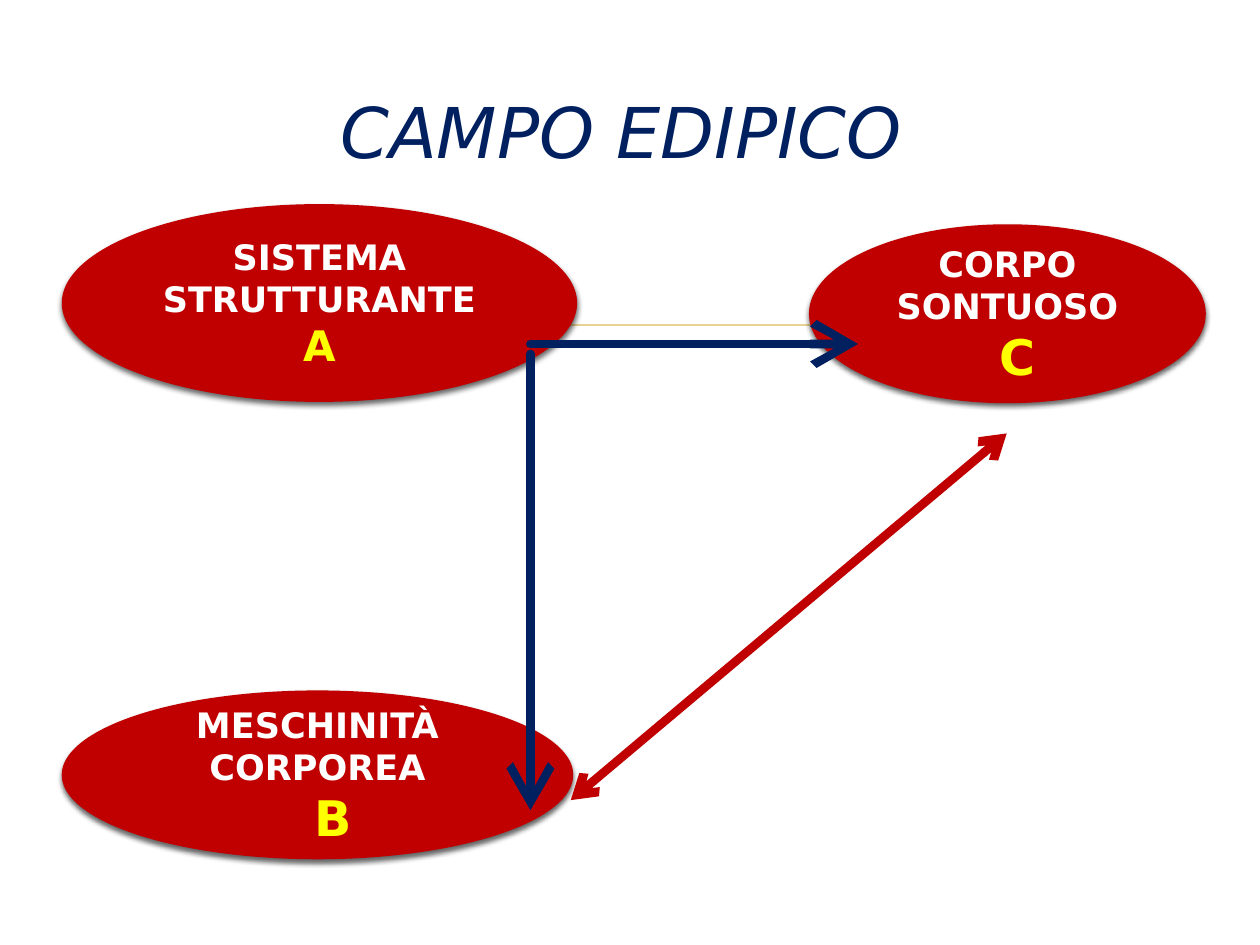
from lxml.etree import SubElement
from pptx import Presentation
from pptx.dml.color import RGBColor
from pptx.enum.shapes import MSO_CONNECTOR, MSO_SHAPE
from pptx.enum.text import MSO_ANCHOR, PP_ALIGN
from pptx.oxml.ns import qn
from pptx.util import Inches, Pt

FONT = "DejaVu Sans"
NAVY, RED, YELLOW, WHITE, GOLD = "002060", "C00000", "FFFF00", "FFFFFF", "E8D191"


def rgb(color):
    return RGBColor.from_string(color)


def add_shadow(effects):
    """Fill an a:effectLst with a soft shadow cast downwards."""
    shadow = SubElement(effects, qn("a:outerShdw"), blurRad=str(Pt(3)),
                        dist=str(Pt(2)), dir="5400000", rotWithShape="0")
    color = SubElement(shadow, qn("a:srgbClr"), val="000000")
    SubElement(color, qn("a:alpha"), val="60000")


def add_run(p, text, size, color, bold=False, italic=False):
    r = p.add_run()
    r.text = text
    r.font.size = Pt(size)
    r.font.name = FONT
    r.font.bold = bold
    r.font.italic = italic
    r.font.color.rgb = rgb(color)
    return r


def add_title(slide, left, top, width, height, text):
    box = slide.shapes.add_textbox(Inches(left), Inches(top), Inches(width), Inches(height))
    tf = box.text_frame
    tf.word_wrap = True
    tf.vertical_anchor = MSO_ANCHOR.MIDDLE
    p = tf.paragraphs[0]
    p.alignment = PP_ALIGN.CENTER
    r = add_run(p, text, 40, NAVY, italic=True)
    effects = r.font._element.makeelement(qn("a:effectLst"))
    r.font._element.find(qn("a:solidFill")).addnext(effects)
    add_shadow(effects)


def add_concept(slide, left, top, width, height, lines, letter, letter_size, indent):
    """Draw an ellipse with its name and, below, its letter moved right by an indent."""
    sp = slide.shapes.add_shape(MSO_SHAPE.OVAL, Inches(left), Inches(top),
                                Inches(width), Inches(height))
    sp.fill.solid()
    sp.fill.fore_color.rgb = rgb(RED)
    sp.line.fill.background()
    sp.shadow.inherit = False
    add_shadow(sp._element.spPr.find(qn("a:effectLst")))

    tf = sp.text_frame
    tf.word_wrap = True
    tf.vertical_anchor = MSO_ANCHOR.MIDDLE
    texts = [(line, 20, WHITE) for line in lines] + [(letter, letter_size, YELLOW)]
    for i, (text, size, color) in enumerate(texts):
        p = tf.add_paragraph() if i else tf.paragraphs[0]
        p.alignment = PP_ALIGN.CENTER
        add_run(p, text, size, color, bold=True)
    p._p.get_or_add_pPr().set("marL", str(Inches(indent)))


def add_line(slide, start, end, color, width, head=None, tail=None, cap="flat"):
    """Draw a line; head and tail are the arrowhead sizes at its start and end."""
    cxn = slide.shapes.add_connector(MSO_CONNECTOR.STRAIGHT,
                                     *(Inches(v) for v in (*start, *end)))
    cxn.line.color.rgb = rgb(color)
    cxn.line.width = Pt(width)
    ln = cxn.line._get_or_add_ln()
    ln.set("cap", cap)
    for tag, size in (("a:headEnd", head), ("a:tailEnd", tail)):
        if size:
            SubElement(ln, qn(tag), type="arrow", w=size, len=size)
    SubElement(cxn._element.spPr, qn("a:effectLst"))


def main():
    prs = Presentation()
    prs.slide_width, prs.slide_height = Inches(10), Inches(7.5)
    slide = prs.slides.add_slide(prs.slide_layouts[6])

    add_line(slide, (1.4, 2.58), (8.61, 2.58), GOLD, 1.25)
    add_title(slide, 0.43, 0.41, 9, 1.25, "CAMPO EDIPICO")

    add_concept(slide, 0.49, 1.62, 4.09, 1.57, ["SISTEMA STRUTTURANTE"], "A", 24, 0)
    add_concept(slide, 6.42, 1.78, 3.15, 1.42, ["CORPO SONTUOSO"], "C", 28, 0.16)
    add_concept(slide, 0.49, 5.48, 4.06, 1.34, ["MESCHINITÀ", "CORPOREA"], "B", 28, 0.25)

    add_line(slide, (4.21, 2.73), (6.81, 2.73), NAVY, 5, tail="lg", cap="rnd")
    add_line(slide, (4.21, 2.81), (4.21, 6.43), NAVY, 5, tail="lg", cap="rnd")
    add_line(slide, (4.53, 6.35), (7.99, 3.44), RED, 5, head="med", tail="med")

    prs.save("out.pptx")


if __name__ == "__main__":
    main()
